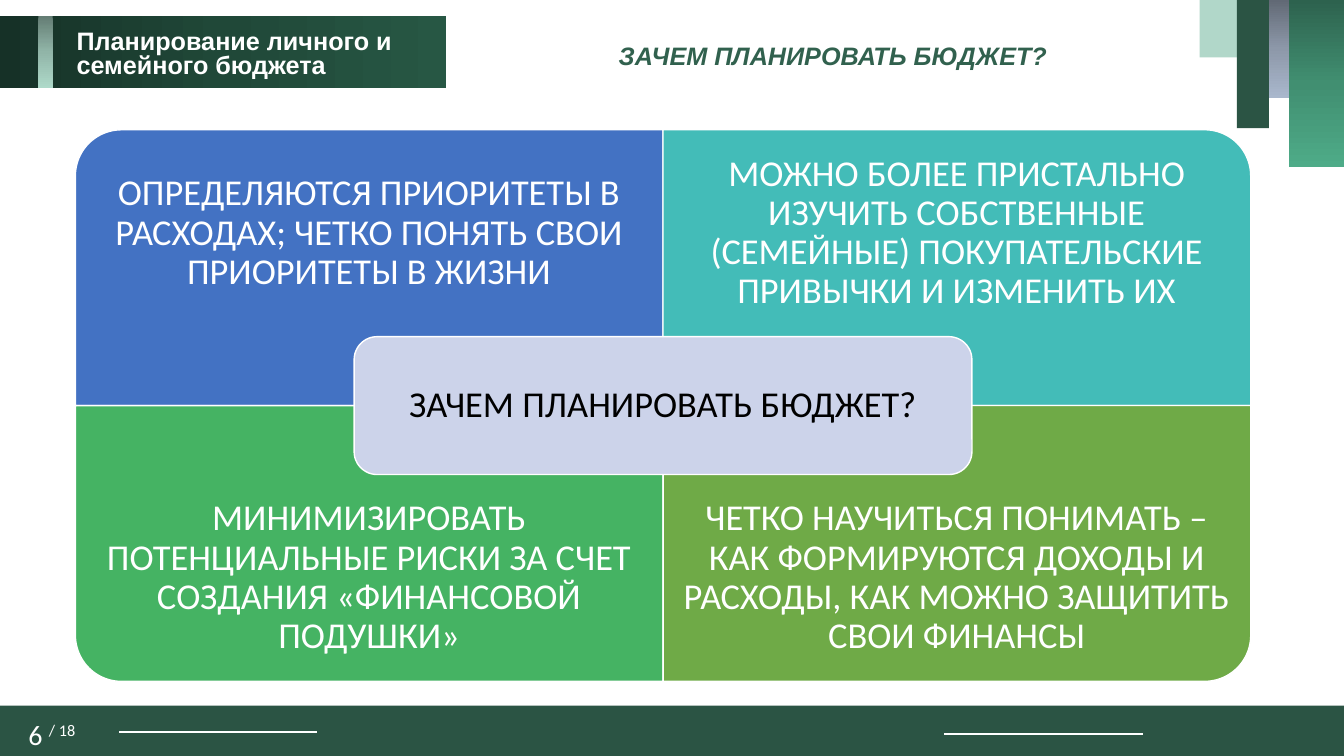
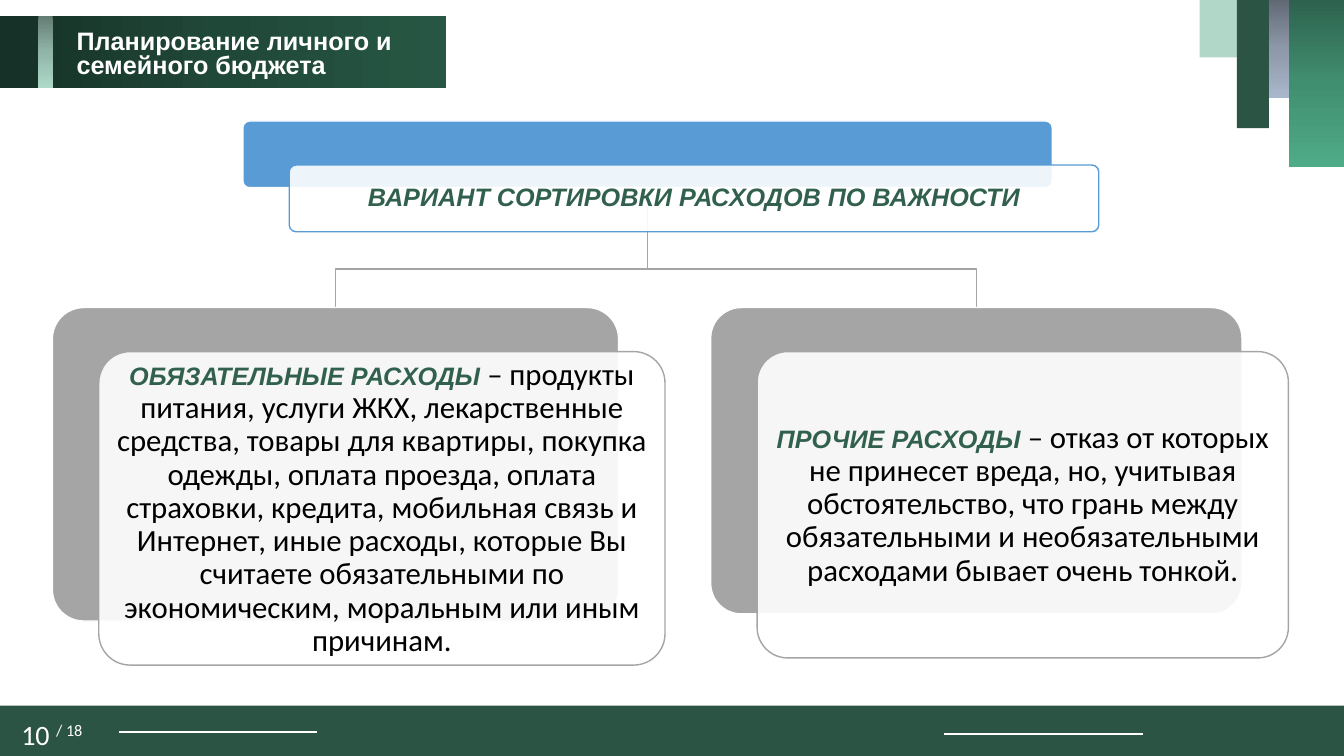
import copy

import pptx
import pptx.dml.color
import pptx.enum.shapes
import pptx.enum.text
import pptx.oxml
import pptx.oxml.ns
import pptx.util

Cm = pptx.util.Cm
Pt = pptx.util.Pt
SHAPE = pptx.enum.shapes.MSO_SHAPE
ALIGN = pptx.enum.text.PP_ALIGN
ANCHOR = pptx.enum.text.MSO_ANCHOR
qn = pptx.oxml.ns.qn

COLORS = {
    "white": "FFFFFF", "black": "000000", "green": "2B5444",
    "mint": "B1D7C9", "title": "31614E", "priorities": "4372C3",
    "habits": "43BCB8", "risks": "45B363", "income": "6FAA47",
    "question": "CCD3EA", "header": "599BD5", "grey": "A5A5A5",
}
GRADIENTS = {
    "steel": ("616975", "8D98A9", "A9B7CC"),
    "emerald": ("2D624E", "418F71", "4EAB88"),
    "band": ("163127", "204838", "275744"),
    "stripe": ("647D74", "91B5A8", "AED9C9"),
}
TITLE_STYLE = {"size": 18, "font": "Arial", "color": "title", "bold": True, "italic": True}
SLIDE_WIDTH, SLIDE_HEIGHT = 33.87, 19.05
SLIDE_TOTAL = 18
FRONT_SHIFT_X, FRONT_SHIFT_Y = 1.17, 1.11


def rgb(color):
    return pptx.dml.color.RGBColor.from_string(COLORS.get(color, color))


def lengths(*values):
    return [Cm(value) for value in values]


def write_run(paragraph, text, *, size=18, font="Calibri", color="white",
              bold=False, italic=False, baseline=None):
    run = paragraph.add_run()
    run.text = text
    run.font.size = Pt(size)
    run.font.name = font
    run.font.color.rgb = rgb(color)
    run.font.bold = bold
    run.font.italic = italic
    if baseline:
        run.font._element.set("baseline", str(baseline * 1000))


def write_text(shape, paragraphs, *, align=ALIGN.CENTER, anchor=ANCHOR.MIDDLE,
               spacing=0.9, inset=(0.25, 0.13)):
    """Fill a shape; each paragraph is a list of (text, run format) pairs."""
    frame = shape.text_frame
    frame.word_wrap = True
    frame.auto_size = pptx.enum.text.MSO_AUTO_SIZE.NONE
    frame.vertical_anchor = anchor
    frame.margin_left = frame.margin_right = Cm(inset[0])
    frame.margin_top = frame.margin_bottom = Cm(inset[1])
    for index, runs in enumerate(paragraphs):
        paragraph = frame.add_paragraph() if index else frame.paragraphs[0]
        paragraph.alignment = align
        paragraph.line_spacing = spacing
        paragraph.space_before = Pt(0)
        for text, style in runs:
            write_run(paragraph, text, **style)


def add_text(slide, box, paragraphs, **layout):
    write_text(slide.shapes.add_textbox(*lengths(*box)), paragraphs, **layout)


def add_block(slide, box, fill, *, preset=SHAPE.RECTANGLE, line=None, corner=None, opacity=None):
    shape = slide.shapes.add_shape(preset, *lengths(*box))
    shape.shadow.inherit = False
    shape.fill.solid()
    shape.fill.fore_color.rgb = rgb(fill)
    if opacity is not None:
        color = shape._element.spPr.find(".//" + qn("a:srgbClr"))
        color.append(pptx.oxml.parse_xml(
            f'<a:alpha {pptx.oxml.ns.nsdecls("a")} val="{opacity * 1000}"/>'))
    if line:
        shape.line.color.rgb = rgb(line)
        shape.line.width = Pt(1)
    else:
        shape.line.fill.background()
    if corner is not None:
        shape.adjustments[0] = corner
    return shape


def add_gradient_block(slide, box, gradient, angle=270):
    """Add a rectangle with three colour stops; 270 runs from top to bottom."""
    shape = add_block(slide, box, "white")
    shape.fill.gradient()
    shape.fill.gradient_angle = angle
    stops = shape._element.spPr.find(".//" + qn("a:gsLst"))
    stops.insert(1, copy.deepcopy(stops[0]))
    for stop, color, position in zip(shape.fill.gradient_stops, GRADIENTS[gradient], (0, 0.5, 1)):
        stop.color.rgb = rgb(color)
        stop.position = position


def add_rule(slide, left, top, width):
    rule = slide.shapes.add_connector(
        pptx.enum.shapes.MSO_CONNECTOR.STRAIGHT, *lengths(left, top, left + width, top))
    rule.line.color.rgb = rgb("white")
    rule.line.width = Pt(1.5)
    rule._element.spPr.append(pptx.oxml.parse_xml(
        f'<a:effectLst {pptx.oxml.ns.nsdecls("a")}/>'))


def add_footer(slide, number):
    add_block(slide, (0, 17.78, SLIDE_WIDTH, 1.27), "green")
    add_rule(slide, 3, 18.44, 5)
    add_rule(slide, 23.8, 18.49, 5)
    add_text(slide, (0, 18.11, 2.62, 0.94),
             [[(f"{number} ", {"size": 20}), (f"/ {SLIDE_TOTAL}", {"size": 20, "baseline": 30})]],
             anchor=ANCHOR.TOP, spacing=0.8)


def add_corner_bars(slide):
    add_gradient_block(slide, (31.98, 0, 0.51, 2.46), "steel")
    add_gradient_block(slide, (32.49, 0, 1.38, 4.22), "emerald")
    add_block(slide, (30.23, 0, 0.97, 1.45), "mint")
    add_block(slide, (31.17, 0, 0.81, 3.23), "green")


def add_topic_band(slide):
    add_gradient_block(slide, (0, 0.41, 11.25, 1.8), "band", angle=0)
    add_gradient_block(slide, (0.97, 0.41, 0.36, 1.8), "stripe")
    style = {"font": "Arial", "bold": True}
    add_text(slide, (1.68, 0.66, 8.53, 1.5),
             [[("Планирование личного и", style)], [("семейного бюджета", style)]],
             align=ALIGN.LEFT, anchor=ANCHOR.TOP, spacing=0.8)


def add_base_slide(presentation, number):
    slide = presentation.slides.add_slide(presentation.slide_layouts[5])
    add_footer(slide, number)
    add_corner_bars(slide)
    add_topic_band(slide)
    return slide


def set_title(slide, box, text, **layout):
    """Place the title placeholder in front of everything drawn so far."""
    title = slide.shapes.title
    title.left, title.top, title.width, title.height = lengths(*box)
    write_text(title, [[(text, TITLE_STYLE)]], **layout)
    slide.shapes._spTree.append(title._element)


def add_quadrant(slide, box, text_top, rotation, fill, text):
    """Add a quadrant whose one rounded corner is turned outwards."""
    left, top, width, height = box
    if rotation in (90, 270):
        shift = (width - height) / 2
        box = (left + shift, top - shift, height, width)
    shape = add_block(slide, box, fill, preset=SHAPE.ROUND_1_RECTANGLE, line="white", corner=0.167)
    shape.rotation = rotation
    add_text(slide, (left, text_top, width, height * 0.75),
             [[(text, {"size": 26})]], inset=(0.51, 0.51))


def add_layered_card(slide, box, color, paragraphs=()):
    """Add a solid card with a translucent one shifted in front of it."""
    left, top, width, height = box
    add_block(slide, box, color, preset=SHAPE.ROUNDED_RECTANGLE, line="white", corner=0.1)
    front = add_block(slide, (left + FRONT_SHIFT_X, top + FRONT_SHIFT_Y, width, height), "white",
                      preset=SHAPE.ROUNDED_RECTANGLE, line=color, corner=0.1, opacity=90)
    if paragraphs:
        write_text(front, paragraphs, inset=(0.18, 0.18))


def add_branch(slide, parent, child):
    """Draw a bent line from the bottom of one box to the top of another."""
    start_x, start_y = parent[0] + parent[2] / 2, parent[1] + parent[3]
    end_x, end_y = child[0] + child[2] / 2, child[1]
    bend_y = start_y + (end_y - start_y) * 0.68
    builder = slide.shapes.build_freeform(Cm(start_x), Cm(start_y))
    builder.add_line_segments(
        [lengths(start_x, bend_y), lengths(end_x, bend_y), lengths(end_x, end_y)], close=False)
    branch = builder.convert_to_shape()
    branch.shadow.inherit = False
    branch.fill.background()
    branch.line.color.rgb = rgb("grey")
    branch.line.width = Pt(1)


def build_reasons_slide(presentation):
    slide = add_base_slide(presentation, 6)
    question = "ЗАЧЕМ ПЛАНИРОВАТЬ БЮДЖЕТ?"
    reasons = [
        (270, "priorities", "ОПРЕДЕЛЯЮТСЯ ПРИОРИТЕТЫ В РАСХОДАХ; ЧЕТКО ПОНЯТЬ СВОИ ПРИОРИТЕТЫ В ЖИЗНИ"),
        (0, "habits", "МОЖНО БОЛЕЕ ПРИСТАЛЬНО ИЗУЧИТЬ СОБСТВЕННЫЕ (СЕМЕЙНЫЕ) "
                      "ПОКУПАТЕЛЬСКИЕ ПРИВЫЧКИ И ИЗМЕНИТЬ ИХ"),
        (180, "risks", "МИНИМИЗИРОВАТЬ ПОТЕНЦИАЛЬНЫЕ РИСКИ ЗА СЧЕТ СОЗДАНИЯ «ФИНАНСОВОЙ ПОДУШКИ»"),
        (90, "income", "ЧЕТКО НАУЧИТЬСЯ ПОНИМАТЬ – КАК ФОРМИРУЮТСЯ ДОХОДЫ И РАСХОДЫ, "
                       "КАК МОЖНО ЗАЩИТИТЬ СВОИ ФИНАНСЫ"),
    ]
    left, top, width, height = 1.9, 3.27, 14.81, 6.95
    for index, (rotation, fill, text) in enumerate(reasons):
        row, column = divmod(index, 2)
        box = (left + column * width, top + row * height, width, height)
        add_quadrant(slide, box, box[1] + row * height / 4, rotation, fill, text)
    center_width, center_height = 15.57, height / 2
    center = add_block(
        slide, (left + width - center_width / 2, top + height - center_height / 2,
                center_width, center_height),
        "question", preset=SHAPE.ROUNDED_RECTANGLE, line="white", corner=0.167)
    write_text(center, [[(question, {"size": 26, "color": "black"})]], inset=(0.28, 0.28))
    set_title(slide, (15.34, 0.89, 12, 1.02), question,
              align=ALIGN.LEFT, anchor=ANCHOR.TOP, spacing=1)


def build_expenses_slide(presentation):
    slide = add_base_slide(presentation, 10)
    header = (6.12, 3.05, 20.4, 1.68)
    expenses = [
        ((1.32, 7.75, 14.27, 7.9), "ОБЯЗАТЕЛЬНЫЕ РАСХОДЫ ",
         "– продукты питания, услуги ЖКХ, лекарственные средства, товары для квартиры, "
         "покупка одежды, оплата проезда, оплата страховки, кредита, мобильная связь и "
         "Интернет, иные расходы, которые Вы считаете обязательными по экономическим, "
         "моральным или иным причинам."),
        ((17.91, 7.75, 13.39, 7.72), "ПРОЧИЕ РАСХОДЫ ",
         "– отказ от которых не принесет вреда, но, учитывая обстоятельство, что грань "
         "между обязательными и необязательными расходами бывает очень тонкой."),
    ]
    for box, _, _ in reversed(expenses):
        add_branch(slide, header, box)
    add_layered_card(slide, header, "header")
    for box, name, description in expenses:
        add_layered_card(slide, box, "grey", [
            [(name, TITLE_STYLE), (description, {"size": 22, "color": "black"})]])
    left, top, width, height = header
    set_title(slide, (left + FRONT_SHIFT_X, top + FRONT_SHIFT_Y, width, height),
              "ВАРИАНТ СОРТИРОВКИ РАСХОДОВ ПО ВАЖНОСТИ")


def main():
    presentation = pptx.Presentation()
    presentation.slide_width = Cm(SLIDE_WIDTH)
    presentation.slide_height = Cm(SLIDE_HEIGHT)
    build_reasons_slide(presentation)
    build_expenses_slide(presentation)
    presentation.save("out.pptx")


if __name__ == "__main__":
    main()
